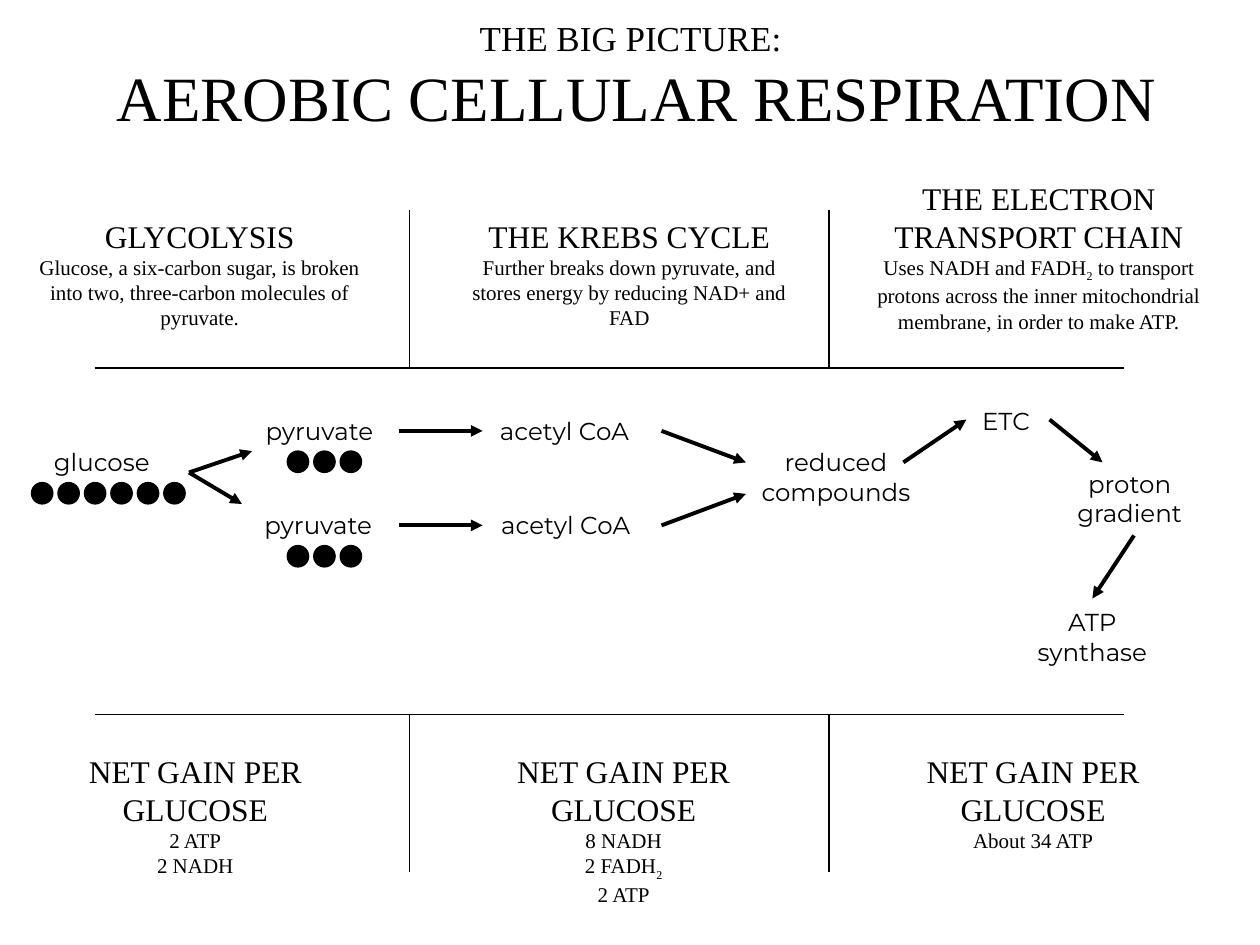
import pptx
import pptx.dml.color
import pptx.enum.shapes
import pptx.enum.text
import pptx.oxml.ns
import pptx.util
from lxml import etree

Inches = pptx.util.Inches
Pt = pptx.util.Pt
BLACK = pptx.dml.color.RGBColor(0, 0, 0)
WHITE = pptx.dml.color.RGBColor(255, 255, 255)
SERIF, SANS = "Times New Roman", "Montserrat"
CENTER = pptx.enum.text.PP_ALIGN.CENTER
LEFT = pptx.enum.text.PP_ALIGN.LEFT

TITLE = [("THE BIG PICTURE:", 20), (" AEROBIC CELLULAR RESPIRATION", 36)]
STAGES = [
    ((0.17, 1.67, 2.83, 1), "GLYCOLYSIS",
     "Glucose, a six-carbon sugar, is broken into two, three-carbon molecules of pyruvate."),
    ((3.58, 1.67, 2.83, 1), "THE KREBS CYCLE",
     "Further breaks down pyruvate, and stores energy by reducing NAD+ and FAD"),
    ((6.83, 1.37, 2.83, 1.3), "THE ELECTRON TRANSPORT CHAIN",
     "Uses NADH and FADH₂ to transport protons across the inner mitochondrial membrane, "
     "in order to make ATP."),
]
GAIN_HEADING = ["NET GAIN PER", "GLUCOSE"]
GAINS = [
    ((0.6, 5.92, 1.9, 1.1), ["2 ATP", "2 NADH"]),
    ((4, 5.92, 1.9, 1.3), ["8 NADH", "2 FADH₂", "2 ATP"]),
    ((7.25, 5.92, 1.9, 0.9), ["About 34 ATP"]),
]
MOLECULES = [
    ((0.33, 3.5, 1.03, 0.33), ["glucose"], LEFT),
    ((2.01, 3.25, 1.13, 0.33), ["pyruvate"], LEFT),
    ((2, 4, 1.13, 0.33), ["pyruvate"], LEFT),
    ((3.87, 3.25, 1.36, 0.33), ["acetyl CoA"], LEFT),
    ((3.88, 4, 1.36, 0.33), ["acetyl CoA"], LEFT),
    ((5.92, 3.5, 1.43, 0.57), ["reduced", "compounds"], CENTER),
    ((7.67, 3.17, 0.63, 0.33), ["ETC"], CENTER),
    ((8.42, 3.67, 1.09, 0.57), ["proton", "gradient"], CENTER),
    ((8.09, 4.77, 1.16, 0.57), ["ATP", "synthase"], CENTER),
]
CARBON_CHAINS = [(0.25, 3.83, 6), (2.28, 3.58, 3), (2.28, 4.33, 3)]
CARBON_SIZE, CARBON_STEP = 0.17, 0.21
ARROWS = [
    (1.5, 3.75, 2, 3.58), (1.5, 3.75, 1.92, 4),
    (3.17, 3.42, 3.83, 3.42), (3.17, 4.17, 3.83, 4.17),
    (5.25, 3.42, 5.92, 3.67), (5.25, 4.17, 5.92, 3.92),
    (7.17, 3.67, 7.67, 3.33), (8.33, 3.33, 8.75, 3.67),
    (9, 4.25, 8.67, 4.75),
]
RULE_LEFT, RULE_RIGHT = 0.75, 8.92
RULE_TOP, RULE_BOTTOM = 2.92, 5.67
COLUMN_EDGES, DIVIDER_HEIGHT = [3.25, 6.58], 1.25

prs = pptx.Presentation()
prs.slide_width, prs.slide_height = Inches(10), Inches(7.5)
s = prs.slides.add_slide(prs.slide_layouts[5])
s.background.fill.solid()
s.background.fill.fore_color.rgb = WHITE


def add_text(lines, box, font=SERIF, align=CENTER, wrap=False, sp=None):
    area = [Inches(v) for v in box]
    if sp is None:
        sp = s.shapes.add_textbox(*area)
    else:
        sp.left, sp.top, sp.width, sp.height = area
    tf = sp.text_frame
    tf.word_wrap = wrap
    tf.auto_size = pptx.enum.text.MSO_AUTO_SIZE.SHAPE_TO_FIT_TEXT
    tf.vertical_anchor = pptx.enum.text.MSO_ANCHOR.TOP
    for i, (text, size) in enumerate(lines):
        p = tf.add_paragraph() if i else tf.paragraphs[0]
        p.alignment = align
        for part in text.replace("₂", "|₂|").split("|"):
            if not part:
                continue
            r = p.add_run()
            r.text = part.replace("₂", "2")
            r.font.name, r.font.size = font, Pt(size)
            r.font.color.rgb = BLACK
            if part == "₂":
                r.font._element.set("baseline", "-25000")


def add_line(x1, y1, x2, y2, width=0.75, arrow=False):
    line = s.shapes.add_connector(pptx.enum.shapes.MSO_CONNECTOR.STRAIGHT,
                                  *[Inches(v) for v in (x1, y1, x2, y2)])
    line.line.color.rgb = BLACK
    line.line.width = Pt(width)
    qn = pptx.oxml.ns.qn
    if arrow:
        etree.SubElement(line.line._get_or_add_ln(), qn("a:tailEnd"), type="triangle")
    etree.SubElement(line._element.spPr, qn("a:effectLst"))


def add_carbon(x, y):
    sp = s.shapes.add_shape(pptx.enum.shapes.MSO_SHAPE.OVAL, Inches(x), Inches(y),
                            Inches(CARBON_SIZE), Inches(CARBON_SIZE))
    sp.shadow.inherit = False
    sp.fill.solid()
    sp.fill.fore_color.rgb = BLACK
    sp.line.color.rgb = BLACK
    sp.line.width = Pt(0.75)


add_text(TITLE, (0.69, 0.08, 8.63, 1.03), sp=s.shapes.title)
for box, heading, summary in STAGES:
    add_text([(heading, 18), (summary, 12)], box, wrap=True)
for box, products in GAINS:
    add_text([(t, 18) for t in GAIN_HEADING] + [(t, 12) for t in products], box)
for box, names, align in MOLECULES:
    add_text([(t, 14) for t in names], box, font=SANS, align=align)
for x, y, count in CARBON_CHAINS:
    for i in range(count):
        add_carbon(x + i * CARBON_STEP, y)
for ends in ARROWS:
    add_line(*ends, width=2.25, arrow=True)
for y in (RULE_TOP, RULE_BOTTOM):
    add_line(RULE_LEFT, y, RULE_RIGHT, y)
for x in COLUMN_EDGES:
    add_line(x, RULE_TOP - DIVIDER_HEIGHT, x, RULE_TOP)
    add_line(x, RULE_BOTTOM, x, RULE_BOTTOM + DIVIDER_HEIGHT)

prs.save("out.pptx")
